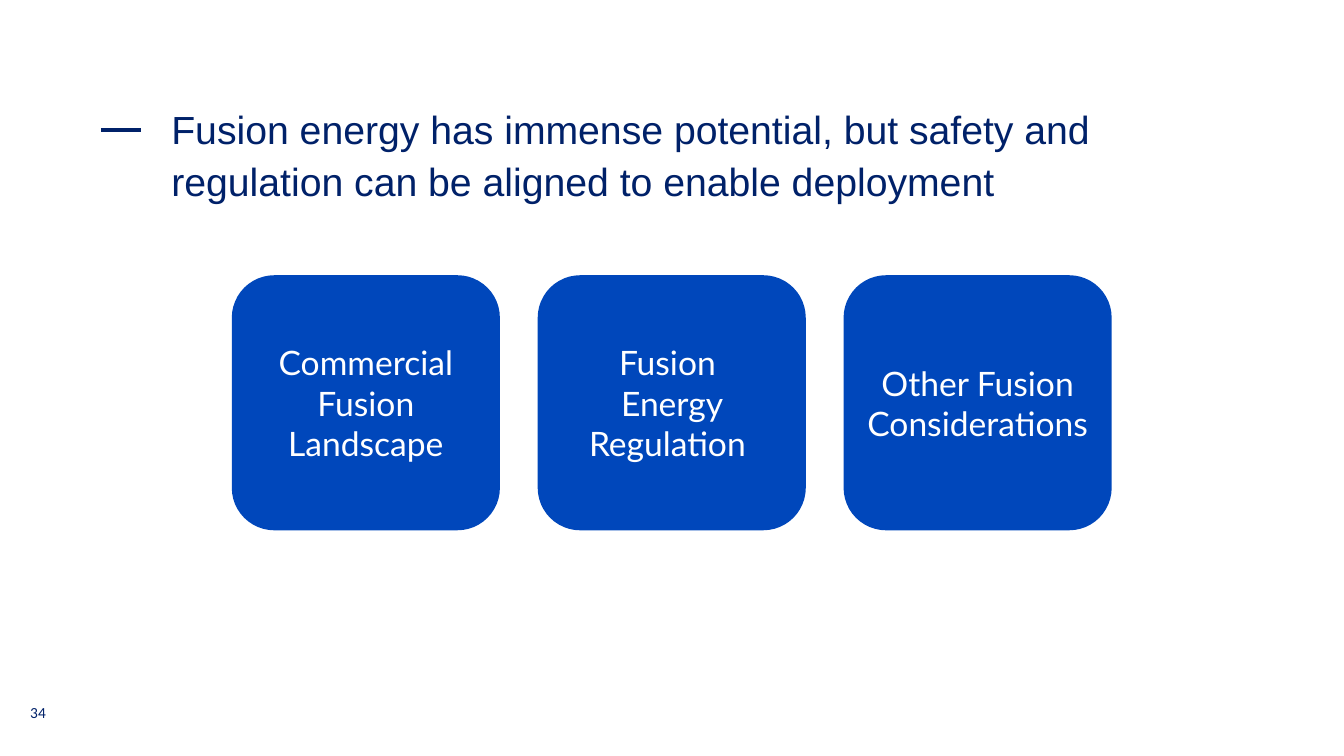
from lxml.etree import SubElement
from pptx import Presentation
from pptx.dml.color import RGBColor
from pptx.enum.shapes import MSO_CONNECTOR, MSO_SHAPE
from pptx.enum.text import MSO_ANCHOR, MSO_AUTO_SIZE, PP_ALIGN
from pptx.oxml.ns import qn
from pptx.util import Pt

COLORS = {"navy": "002169", "blue": "0047BB", "white": "FFFFFF"}
TITLE = ("Fusion energy has immense potential, but safety and "
         "regulation can be aligned to enable deployment")
TOPICS = [
    ["Commercial Fusion Landscape"],
    ["Fusion ", "Energy Regulation "],
    ["Other Fusion Considerations"],
]


def color(name):
    """Return the named colour."""
    return RGBColor.from_string(COLORS[name])


def add_run(paragraph, text, font, size, color_name):
    """Add one formatted run to a paragraph."""
    run = paragraph.add_run()
    run.text = text
    run.font.name = font
    run.font.size = Pt(size)
    run.font.color.rgb = color(color_name)


def set_frame(frame, anchor, side=0, vertical=0):
    """Set wrapping, anchor and margins of a text frame."""
    frame.word_wrap = True
    frame.auto_size = MSO_AUTO_SIZE.NONE
    frame.vertical_anchor = anchor
    frame.margin_left = frame.margin_right = Pt(side)
    frame.margin_top = frame.margin_bottom = Pt(vertical)


def add_heading(slide, left, top, width, height):
    """Place the title and the dash before it."""
    indent = 50.4
    dash = slide.shapes.add_connector(
        MSO_CONNECTOR.STRAIGHT, Pt(left), Pt(top + 20.7), Pt(left + 28.8), Pt(top + 20.7))
    dash.line.color.rgb = color("navy")
    dash.line.width = Pt(2.5)
    SubElement(dash._element.spPr, qn("a:effectLst"))

    title = slide.shapes.title
    title.left, title.top = Pt(left + indent), Pt(top)
    title.width, title.height = Pt(width - indent), Pt(height)
    set_frame(title.text_frame, MSO_ANCHOR.TOP)
    paragraph = title.text_frame.paragraphs[0]
    paragraph.alignment = PP_ALIGN.LEFT
    paragraph.line_spacing = 1.1
    add_run(paragraph, TITLE, "Arial", 28, "navy")


def add_topics(slide, left, top, width, height, gap=27):
    """Place the topic cards in one evenly spaced row."""
    card_width = (width - gap * (len(TOPICS) - 1)) / len(TOPICS)
    for index, lines in enumerate(TOPICS):
        card = slide.shapes.add_shape(
            MSO_SHAPE.ROUNDED_RECTANGLE, Pt(left + index * (card_width + gap)),
            Pt(top), Pt(card_width), Pt(height))
        card.shadow.inherit = False
        card.fill.solid()
        card.fill.fore_color.rgb = color("blue")
        card.line.fill.background()
        set_frame(card.text_frame, MSO_ANCHOR.MIDDLE, 7.2, 3.6)
        paragraph = card.text_frame.paragraphs[0]
        paragraph.alignment = PP_ALIGN.CENTER
        for number, line in enumerate(lines):
            if number:
                paragraph.add_line_break()
            add_run(paragraph, line, "Lato", 24, "white")


def add_page_number(slide, left, top, width, height):
    """Place the page number."""
    page = slide.shapes.add_textbox(Pt(left), Pt(top), Pt(width), Pt(height))
    set_frame(page.text_frame, MSO_ANCHOR.TOP, 0, 3.6)
    add_run(page.text_frame.paragraphs[0], "34", "Calibri", 11, "navy")


def main():
    """Build and save the slide."""
    presentation = Presentation()
    presentation.slide_width, presentation.slide_height = Pt(960), Pt(540)
    slide = presentation.slides.add_slide(presentation.slide_layouts.get_by_name("Title Only"))
    add_heading(slide, 72, 72, 807.1, 72)
    add_topics(slide, 165.6, 196.6, 628.5, 182.2)
    add_page_number(slide, 21.6, 499, 34.6, 28.8)
    presentation.save("out.pptx")


if __name__ == "__main__":
    main()
